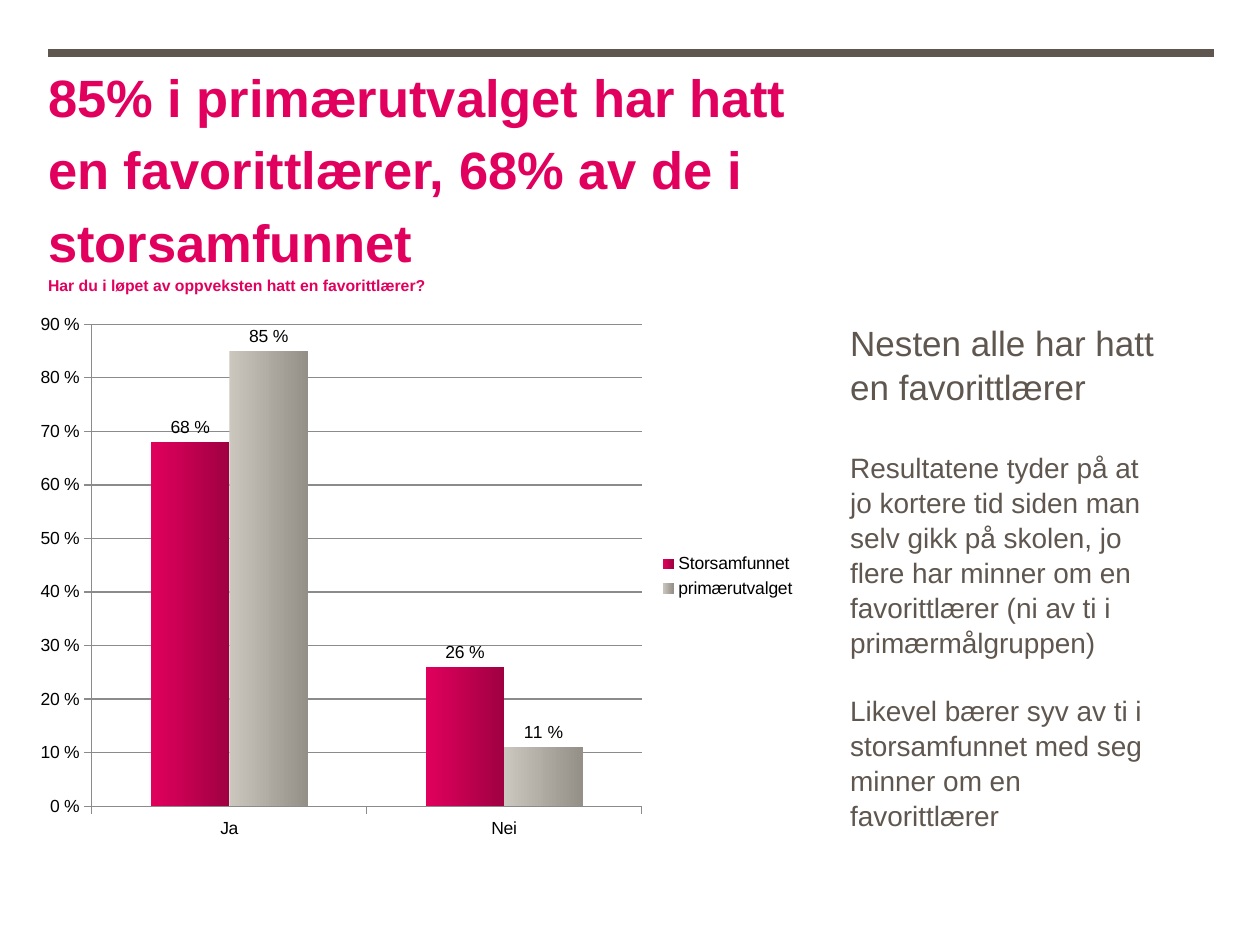
from lxml import etree
from pptx import Presentation
from pptx.chart.data import CategoryChartData
from pptx.dml.color import RGBColor
from pptx.enum.chart import XL_CHART_TYPE, XL_LABEL_POSITION, XL_LEGEND_POSITION, XL_TICK_MARK
from pptx.enum.shapes import MSO_CONNECTOR
from pptx.oxml.ns import qn
from pptx.util import Cm, Pt

COLUMN = XL_CHART_TYPE.COLUMN_CLUSTERED
STRAIGHT = MSO_CONNECTOR.STRAIGHT
OUTSIDE = XL_TICK_MARK.OUTSIDE
NO_TICK = XL_TICK_MARK.NONE
ABOVE_BAR = XL_LABEL_POSITION.OUTSIDE_END
RIGHT = XL_LEGEND_POSITION.RIGHT

COLORS = {
    "pink": "E1005D",
    "dark_pink": "A00042",
    "sand": "CBC7BF",
    "dark_sand": "949087",
    "brown": "5F574F",
    "grid": "8B8B8B",
    "black": "000000",
}
PERCENT = "0\\ %"


class SlideBuilder:
    font = "Arial"

    def __init__(self, slide):
        self.s = slide

    def color(self, name):
        return RGBColor.from_string(COLORS[name])

    def rule(self, left, top, right, color, width):
        line = self.s.shapes.add_connector(STRAIGHT, Cm(left), Cm(top), Cm(right), Cm(top))
        line.line.color.rgb = self.color(color)
        line.line.width = Pt(width)
        etree.SubElement(line._element.spPr, qn("a:effectLst"))

    def text_box(self, left, top, width, height, inset_x=0.0, inset_y=0.0):
        sp = self.s.shapes.add_textbox(Cm(left), Cm(top), Cm(width), Cm(height))
        tf = sp.text_frame
        tf.word_wrap = True
        tf.margin_left = tf.margin_right = Cm(inset_x)
        tf.margin_top = tf.margin_bottom = Cm(inset_y)
        return tf

    def run(self, p, text, size, color, bold=False):
        r = p.add_run()
        r.text = text
        r.font.name = self.font
        r.font.size = Pt(size)
        r.font.bold = bold
        r.font.color.rgb = self.color(color)

    def heading(self, left, top, width, height, title, question):
        p = self.text_box(left, top, width, height).paragraphs[0]
        p.line_spacing = 1.15
        self.run(p, title, 30, "pink", True)
        p.add_line_break()
        self.run(p, question, 9, "pink", True)

    def body(self, left, top, width, height, paragraphs):
        tf = self.text_box(left, top, width, height, 0.25, 0.13)
        for i, (text, size, gap) in enumerate(paragraphs):
            p = tf.add_paragraph() if i else tf.paragraphs[0]
            p.line_spacing = 1.04
            p.space_before = Pt(gap)
            self.run(p, text, size, "brown")

    def axis(self, axis, tick):
        axis.major_tick_mark = tick
        axis.minor_tick_mark = NO_TICK
        axis.format.line.color.rgb = self.color("grid")

    def column_chart(self, left, top, width, height, categories, series):
        data = CategoryChartData(number_format=PERCENT)
        data.categories = categories
        for name, values, _ in series:
            data.add_series(name, values)
        chart = self.s.shapes.add_chart(
            COLUMN, Cm(left), Cm(top), Cm(width), Cm(height), data
        ).chart
        chart.has_title = False
        chart.font.name = self.font
        chart.font.size = Pt(10)
        chart.font.color.rgb = self.color("black")
        chart.has_legend = True
        chart.legend.position = RIGHT
        chart.legend.include_in_layout = False

        self.axis(chart.category_axis, OUTSIDE)
        value_axis = chart.value_axis
        self.axis(value_axis, OUTSIDE)
        value_axis.minimum_scale = 0
        value_axis.maximum_scale = 0.9
        value_axis.major_unit = 0.1
        value_axis.has_major_gridlines = True
        value_axis.major_gridlines.format.line.color.rgb = self.color("grid")
        value_axis.tick_labels.number_format = PERCENT
        value_axis.tick_labels.number_format_is_linked = False

        plot = chart.plots[0]
        plot.gap_width = 150
        plot.overlap = 0
        plot.vary_by_categories = False
        for bars, (_, _, shades) in zip(plot.series, series):
            fill = bars.format.fill
            fill.gradient()
            fill.gradient_angle = 0
            for stop, shade in zip(fill.gradient_stops, shades):
                stop.color.rgb = self.color(shade)
            labels = bars.data_labels
            labels.show_value = True
            labels.number_format = PERCENT
            labels.number_format_is_linked = False
            labels.position = ABOVE_BAR


def main():
    prs = Presentation()
    prs.slide_width, prs.slide_height = Cm(25.4), Cm(19.05)
    slide = SlideBuilder(prs.slides.add_slide(prs.slide_layouts[6]))
    slide.rule(0.97, 1.07, 24.48, "brown", 4.5)
    slide.heading(
        0.97, 1.12, 14.94, 2.82,
        "85% i primærutvalget har hatt en favorittlærer, 68% av de i storsamfunnet",
        "Har du i løpet av oppveksten hatt en favorittlærer?",
    )
    slide.column_chart(
        0.5, 6.12, 15.8, 11,
        ["Ja", "Nei"],
        [
            ("Storsamfunnet", (0.68, 0.26), ("pink", "dark_pink")),
            ("primærutvalget", (0.85, 0.11), ("sand", "dark_sand")),
        ],
    )
    slide.body(
        16.89, 6.32, 6.81, 10.34,
        [
            ("Nesten alle har hatt en favorittlærer", 20, 0),
            ("Resultatene tyder på at jo kortere tid siden man selv gikk på skolen, "
             "jo flere har minner om en favorittlærer (ni av ti i primærmålgruppen)", 16, 24),
            ("Likevel bærer syv av ti i storsamfunnet med seg minner om en favorittlærer", 16, 19),
        ],
    )
    prs.save("out.pptx")


if __name__ == "__main__":
    main()
